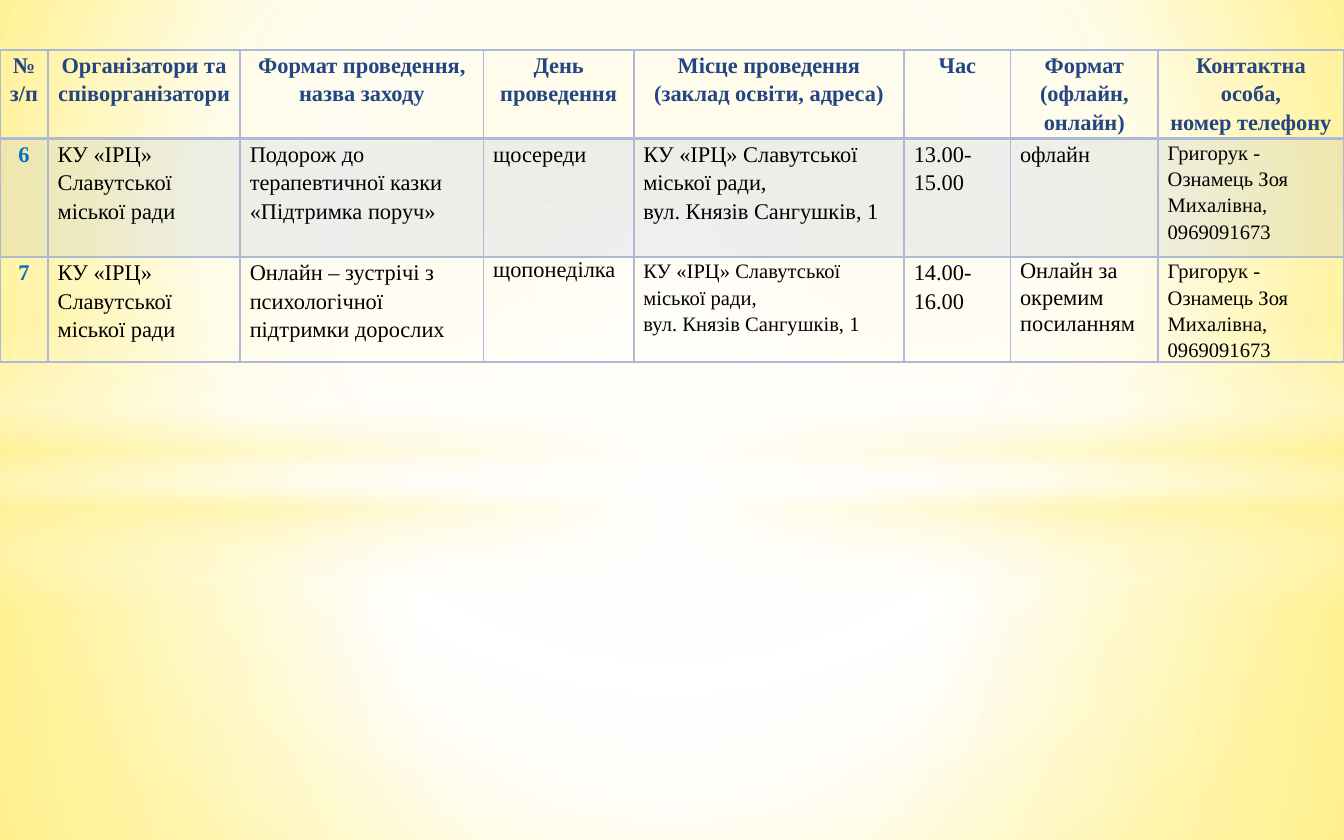
from lxml import etree
from pptx import Presentation
from pptx import util as u
from pptx.dml.color import RGBColor
from pptx.enum import shapes, text
from pptx.oxml.ns import qn

FONT = "Times New Roman"
RULE, HEAD, NUMBER, BODY = "AEBAD5", "244583", "0070C0", "000000"
CENTRE = (50, 50, 50, 50)

COLS = [0.91, 3.63, 4.6, 2.84, 5.11, 2.01, 2.79, 3.51]
ROWS = [1.68, 2.24, 1.68]
ORGANISER = "КУ «ІРЦ» Славутської міської ради"
PLACE = "КУ «ІРЦ» Славутської міської ради,\nвул. Князів Сангушків, 1"
CONTACT = "Григорук - Ознамець Зоя Михалівна,\n0969091673"
SCHEDULE = [
    ["№\nз/п", "Організатори та співорганізатори",
     "Формат проведення, назва заходу", "День проведення",
     "Місце проведення\n(заклад освіти, адреса)", "Час",
     "Формат\n(офлайн, онлайн)", "Контактна особа,\nномер телефону"],
    ["6", ORGANISER, "Подорож до терапевтичної казки «Підтримка поруч»",
     "щосереди", PLACE, "13.00-15.00", "офлайн", CONTACT],
    ["7", ORGANISER, "Онлайн – зустрічі з психологічної підтримки дорослих",
     "щопонеділка", PLACE, "14.00-16.00", "Онлайн за окремим посиланням",
     CONTACT],
]
SMALL = {(1, 7), (2, 4), (2, 7)}
SPACING = {(2, 3): 1.0, (2, 6): 1.07}


def rgb(value):
    return RGBColor.from_string(value)


def add_color(parent, value, alpha=100):
    clr = etree.SubElement(parent, qn("a:srgbClr"), val=value)
    if alpha < 100:
        etree.SubElement(clr, qn("a:alpha"), val=str(alpha * 1000))


def set_gradient(fill, element, stops, focus=None):
    """Circular gradient around focus (l, t, r, b in %), or top to bottom."""
    fill.gradient()
    grad = element.find(".//" + qn("a:gradFill"))
    for child in list(grad):
        grad.remove(child)
    gs_list = etree.SubElement(grad, qn("a:gsLst"))
    for pos, *color in stops:
        gs = etree.SubElement(gs_list, qn("a:gs"), pos=str(pos * 1000))
        add_color(gs, *color)
    if focus:
        path = etree.SubElement(grad, qn("a:path"), path="circle")
        sides = {k: str(v * 1000) for k, v in zip("ltrb", focus)}
        etree.SubElement(path, qn("a:fillToRect"), **sides)
    else:
        etree.SubElement(grad, qn("a:lin"), ang="5400000", scaled="0")


def add_glow(s, kind, top, height, stops, focus=CENTRE):
    sp = s.shapes.add_shape(kind, 0, u.Cm(top), u.Cm(25.4), u.Cm(height))
    sp.shadow.inherit = False
    sp.line.fill.background()
    set_gradient(sp.fill, sp.element, stops, focus)


def add_borders(cell, **widths):
    tc_pr = cell._tc.get_or_add_tcPr()
    for side in "LRTB":
        width = u.Pt(widths.get(side, 1))
        ln = etree.SubElement(tc_pr, qn("a:ln" + side), w=str(int(width)))
        add_color(etree.SubElement(ln, qn("a:solidFill")), RULE)


def tint(cell):
    cell.fill.solid()
    cell.fill.fore_color.rgb = rgb(RULE)
    clr = cell._tc.tcPr.find(qn("a:solidFill")).find(qn("a:srgbClr"))
    etree.SubElement(clr, qn("a:alpha"), val="20000")


def write_cell(cell, content, color, size, spacing, strong):
    """Strong cells are bold and centred."""
    cell.margin_left = cell.margin_right = u.Cm(0.13 if strong else 0.18)
    cell.margin_top = cell.margin_bottom = 0
    tf = cell.text_frame
    for i, line in enumerate(content.split("\n")):
        p = tf.add_paragraph() if i else tf.paragraphs[0]
        p.alignment = text.PP_ALIGN.CENTER if strong else text.PP_ALIGN.LEFT
        p.line_spacing = spacing
        r = p.add_run()
        r.text = line
        r.font.name, r.font.size = FONT, u.Pt(size)
        r.font.bold = strong
        r.font.color.rgb = rgb(color)


def add_schedule(s):
    frame = s.shapes.add_table(len(ROWS), len(COLS), 0, u.Cm(0.94),
                               u.Cm(sum(COLS)), u.Cm(sum(ROWS)))
    table = frame.table
    table.first_row = table.horz_banding = False
    for col, width in zip(table.columns, COLS):
        col.width = u.Cm(width)
    for row, height in zip(table.rows, ROWS):
        row.height = u.Cm(height)
    for i, row in enumerate(SCHEDULE):
        for j, content in enumerate(row):
            cell = table.cell(i, j)
            add_borders(cell, B=2 if i == 0 else 1, T=2 if i == 1 else 1)
            if i == 1:
                tint(cell)
            else:
                cell.fill.background()
            color = HEAD if i == 0 else NUMBER if j == 0 else BODY
            write_cell(cell, content, color, 11 if (i, j) in SMALL else 12,
                       SPACING.get((i, j), 1.15), strong=i == 0 or j == 0)


def add_backdrop(s):
    rect = shapes.MSO_SHAPE.RECTANGLE
    set_gradient(s.background.fill, s.element,
                 [(0, "FFF18D"), (60, "FFFFFF"), (100, "FFE94E")],
                 (20, 10, 20, 60))
    add_glow(s, rect, 8.94, 6.93, [(0, "FFFFFF", 91), (37, "FFFFFF", 76),
                                   (100, "FFF39D", 79)])
    add_glow(s, rect, 0, 8.94, [(0, "FFFFFF", 89), (48, "FFFFFF", 62),
                                (100, "FFF39D", 79)])
    add_glow(s, rect, 6.15, 5.28,
             [(0, "FFFFFF", 0), (29, "FFFFFF", 30), (45, "FFF39D", 40),
              (55, "FFFFFF", 26), (65, "FFF39D", 60), (100, "FFFFFF", 0)],
             focus=None)
    add_glow(s, shapes.MSO_SHAPE.OVAL, 3.71, 11.81,
             [(0, "FFFFFF"), (54, "FFFFFF", 0)])


def main():
    prs = Presentation()
    prs.slide_width, prs.slide_height = u.Cm(25.4), u.Cm(15.88)
    s = prs.slides.add_slide(prs.slide_layouts[6])
    add_backdrop(s)
    add_schedule(s)
    prs.save("out.pptx")


if __name__ == "__main__":
    main()
